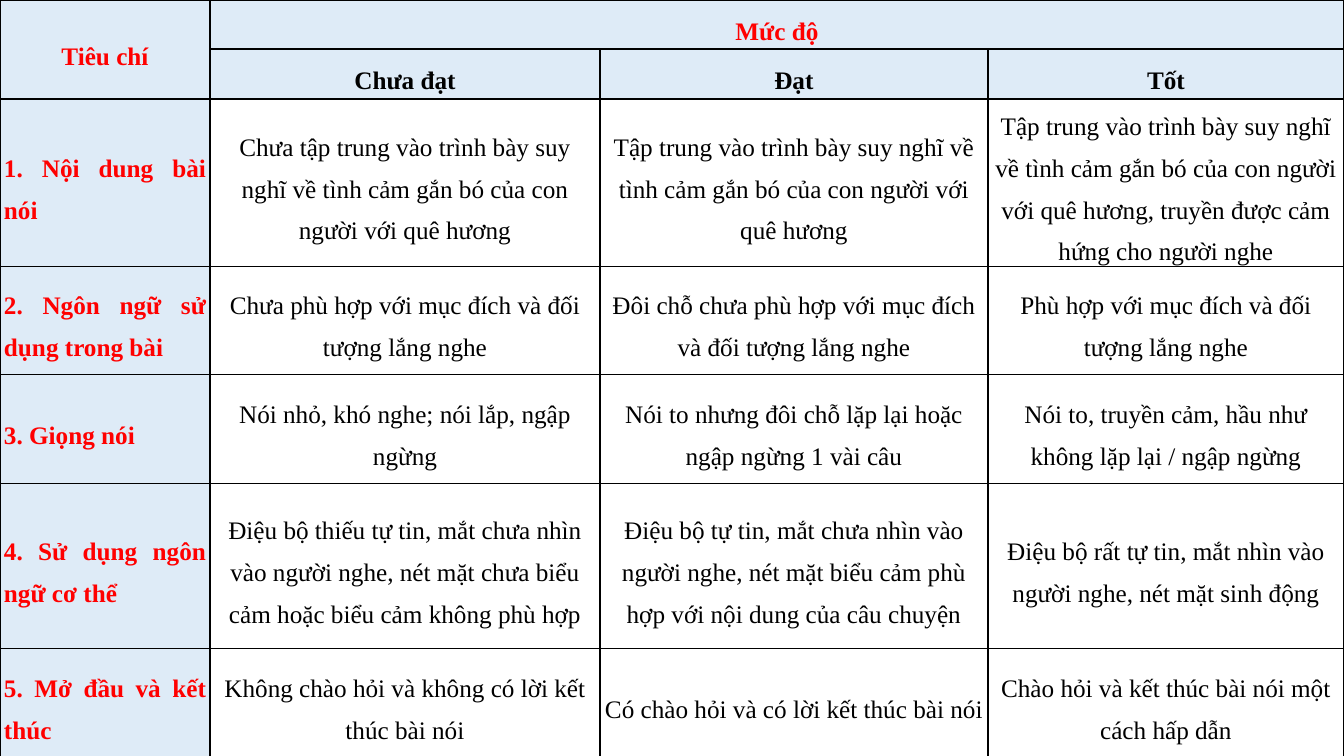
from lxml.etree import SubElement
from pptx import Presentation
from pptx.dml.color import RGBColor
from pptx.enum.text import MSO_ANCHOR, PP_ALIGN
from pptx.oxml.ns import qn
from pptx.util import Emu, Pt

COLORS = {"header": "DEEBF7", "body": "FFFFFF", "accent": "FF0000", "text": "000000", "border": "000000"}
COLUMN_WIDTHS = [210, 390, 388, 356]
ROW_HEIGHTS = [49, 50, 166, 108, 109, 165, 109]
RUBRIC = [
    ["Tiêu chí", "Mức độ", "", ""],
    ["", "Chưa đạt", "Đạt", "Tốt"],
    ["1. Nội dung bài nói",
     "Chưa tập trung vào trình bày suy nghĩ về tình cảm gắn bó của con người với quê hương",
     "Tập trung vào trình bày suy nghĩ về tình cảm gắn bó của con người với quê hương",
     "Tập trung vào trình bày suy nghĩ về tình cảm gắn bó của con người với quê hương, "
     "truyền được cảm hứng cho người nghe"],
    ["2. Ngôn ngữ sử dụng trong bài",
     "Chưa phù hợp với mục đích và đối tượng lắng nghe",
     "Đôi chỗ chưa phù hợp với mục đích và đối tượng lắng nghe",
     "Phù hợp với mục đích và đối tượng lắng nghe"],
    ["3. Giọng nói",
     "Nói nhỏ, khó nghe; nói lắp, ngập ngừng",
     "Nói to nhưng đôi chỗ lặp lại hoặc ngập ngừng 1 vài câu",
     "Nói to, truyền cảm, hầu như không lặp lại / ngập ngừng"],
    ["4. Sử dụng ngôn ngữ cơ thể",
     "Điệu bộ thiếu tự tin, mắt chưa nhìn vào người nghe, nét mặt chưa biểu cảm "
     "hoặc biểu cảm không phù hợp",
     "Điệu bộ tự tin, mắt chưa nhìn vào người nghe, nét mặt biểu cảm phù hợp "
     "với nội dung của câu chuyện",
     "Điệu bộ rất tự tin, mắt nhìn vào người nghe, nét mặt sinh động"],
    ["5. Mở đầu và kết thúc",
     "Không chào hỏi và không có lời kết thúc bài nói",
     "Có chào hỏi và có lời kết thúc bài nói",
     "Chào hỏi và kết thúc bài nói một cách hấp dẫn"],
]


def px(length):
    return Emu(round(length * 914400 / 100.8))


class RubricSlide:
    """Holds the text style and the current slide, and draws the rubric table."""

    font_name = "Times New Roman"
    font_size = Pt(18)
    line_spacing = 1.5

    def __init__(self, presentation):
        self.slide = presentation.slides.add_slide(presentation.slide_layouts[6])

    def add_borders(self, cell):
        properties = cell._tc.get_or_add_tcPr()
        for side in ("lnL", "lnR", "lnT", "lnB"):
            line = SubElement(properties, qn(f"a:{side}"), w=str(Pt(1)))
            fill = SubElement(line, qn("a:solidFill"))
            SubElement(fill, qn("a:srgbClr"), val=COLORS["border"])

    def format_cell(self, cell, fill):
        self.add_borders(cell)
        cell.fill.solid()
        cell.fill.fore_color.rgb = RGBColor.from_string(COLORS[fill])
        cell.vertical_anchor = MSO_ANCHOR.MIDDLE
        cell.margin_left = cell.margin_right = px(4)
        cell.margin_top = cell.margin_bottom = 0

    def add_text(self, cell, text, color, bold, alignment):
        paragraph = cell.text_frame.paragraphs[0]
        paragraph.alignment = alignment
        paragraph.line_spacing = self.line_spacing
        run = paragraph.add_run()
        run.text = text
        run.font.name = self.font_name
        run.font.size = self.font_size
        run.font.bold = bold
        run.font.color.rgb = RGBColor.from_string(COLORS[color])

    def add_table(self, left, top, widths, heights, rows):
        frame = self.slide.shapes.add_table(
            len(heights), len(widths), px(left), px(top), px(sum(widths)), px(sum(heights)))
        table = frame.table
        table.first_row = table.horz_banding = False
        for column, width in zip(table.columns, widths):
            column.width = px(width)
        for row, height in zip(table.rows, heights):
            row.height = px(height)
        for row_index, texts in enumerate(rows):
            for column_index, text in enumerate(texts):
                cell = table.cell(row_index, column_index)
                heading = row_index < 2 or column_index == 0
                accent = row_index == 0 or column_index == 0
                criterion = row_index >= 2 and column_index == 0
                self.format_cell(cell, "header" if heading else "body")
                if text:
                    self.add_text(cell, text, "accent" if accent else "text", heading,
                                  PP_ALIGN.JUSTIFY if criterion else PP_ALIGN.CENTER)
        table.cell(0, 0).merge(table.cell(1, 0))
        table.cell(0, 1).merge(table.cell(0, 3))


def main():
    presentation = Presentation()
    presentation.slide_width = px(1344)
    presentation.slide_height = px(756)
    rubric = RubricSlide(presentation)
    rubric.add_table(0, 0, COLUMN_WIDTHS, ROW_HEIGHTS, RUBRIC)
    presentation.save("out.pptx")


if __name__ == "__main__":
    main()
